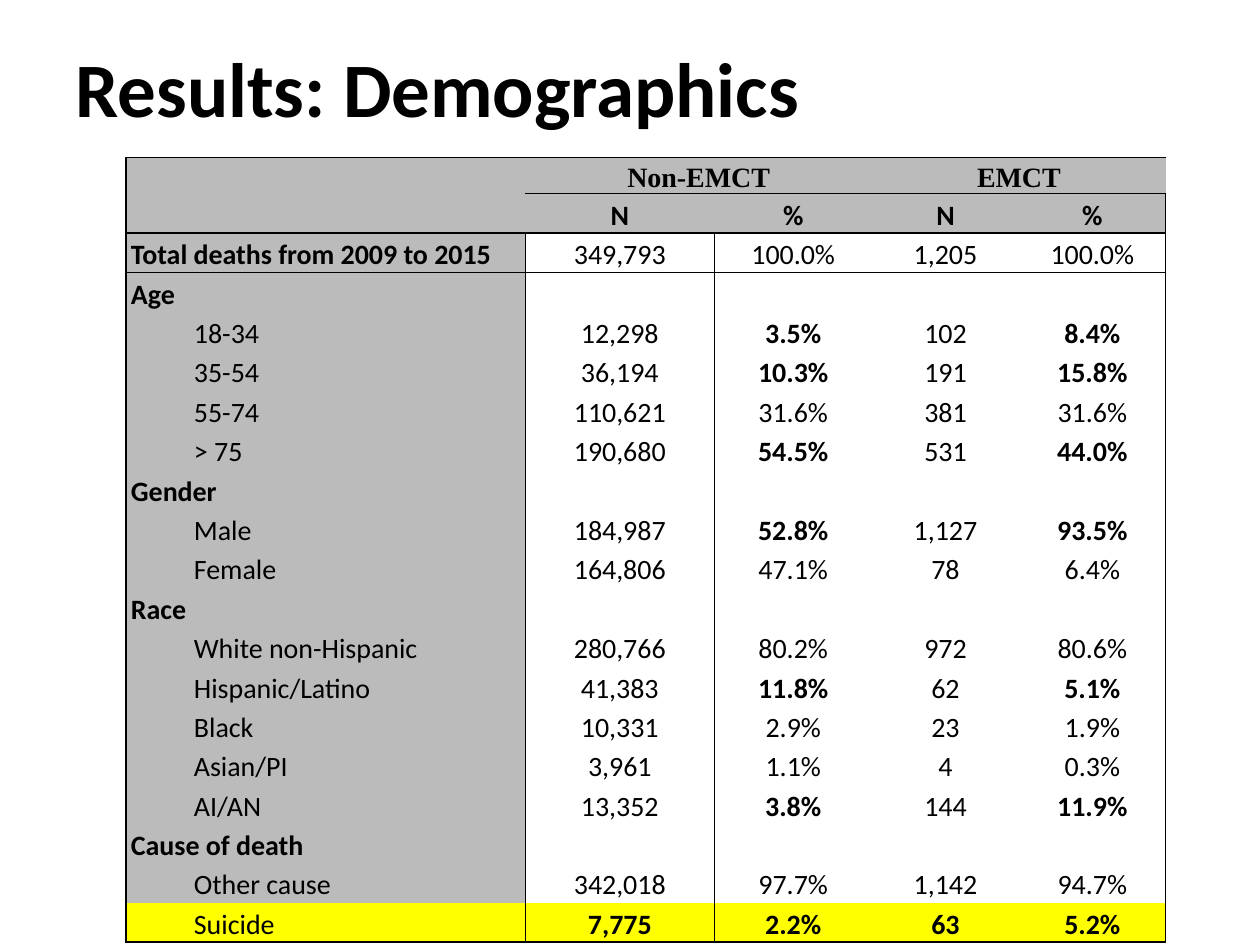
import pptx
import pptx.dml.color
import pptx.enum.text
import pptx.oxml
import pptx.oxml.ns
import pptx.util
from dataclasses import dataclass

Cm = pptx.util.Cm
Pt = pptx.util.Pt
ALIGN = pptx.enum.text.PP_ALIGN
ANCHOR = pptx.enum.text.MSO_ANCHOR


@dataclass(frozen=True)
class Theme:
    ink: str = "000000"
    paper: str = "FFFFFF"
    heading: str = "BBBBBB"
    highlight: str = "FFFF00"
    body_font: str = "Calibri"
    group_font: str = "Times New Roman"
    title_size: int = 44
    table_size: int = 16
    border: int = 1


theme = Theme()


def write(frame, text, font=theme.body_font, size=theme.table_size, bold=False,
          align=ALIGN.CENTER, line=1.15, gap=3, indent=0):
    para = frame.paragraphs[0]
    para.alignment = align
    para.line_spacing = line
    para.space_before = para.space_after = Pt(gap)
    if indent:
        para.level = 1
        properties = para._p.get_or_add_pPr()
        properties.set("marL", str(Cm(indent)))
        properties.set("indent", "0")
    span = para.add_run()
    span.text = text
    span.font.name = font
    span.font.size = Pt(size)
    span.font.bold = bold
    span.font.color.rgb = pptx.dml.color.RGBColor.from_string(theme.ink)


def style_cell(cell, fill, sides):
    properties = cell._tc.get_or_add_tcPr()
    for side in ("L", "R", "T", "B"):
        if side in sides:
            properties.append(pptx.oxml.parse_xml(
                f'<a:ln{side} {pptx.oxml.ns.nsdecls("a")} w="{Pt(theme.border)}">'
                f'<a:solidFill><a:srgbClr val="{theme.ink}"/></a:solidFill></a:ln{side}>'))
    cell.fill.solid()
    cell.fill.fore_color.rgb = pptx.dml.color.RGBColor.from_string(fill)
    cell.margin_left = cell.margin_right = Cm(0.1)
    cell.margin_top = cell.margin_bottom = 0


deck = pptx.Presentation()
deck.slide_width = Cm(25.4)
deck.slide_height = Cm(19.05)
page = deck.slides.add_slide(deck.slide_layouts[5])

title = page.shapes.title
title.left, title.top, title.width, title.height = Cm(1.27), Cm(0.76), Cm(22.86), Cm(2.21)
title.text_frame.auto_size = pptx.enum.text.MSO_AUTO_SIZE.NONE
title.text_frame.vertical_anchor = ANCHOR.MIDDLE
write(title.text_frame, "Results: Demographics", size=theme.title_size, bold=True,
      align=ALIGN.LEFT, line=0.9, gap=0)

sections = [
    ("Age", [
        ("18-34", "12,298", "3.5%*", "102", "8.4%*"),
        ("35-54", "36,194", "10.3%*", "191", "15.8%*"),
        ("55-74", "110,621", "31.6%", "381", "31.6%"),
        ("> 75", "190,680", "54.5%*", "531", "44.0%*"),
    ]),
    ("Gender", [
        ("Male", "184,987", "52.8%*", "1,127", "93.5%*"),
        ("Female", "164,806", "47.1%", "78", "6.4%"),
    ]),
    ("Race", [
        ("White non-Hispanic", "280,766", "80.2%", "972", "80.6%"),
        ("Hispanic/Latino", "41,383", "11.8%*", "62", "5.1%*"),
        ("Black", "10,331", "2.9%", "23", "1.9%"),
        ("Asian/PI", "3,961", "1.1%", "4", "0.3%"),
        ("AI/AN", "13,352", "3.8%*", "144", "11.9%*"),
    ]),
    ("Cause of death", [
        ("Other cause", "342,018", "97.7%", "1,142", "94.7%"),
        ("Suicide", "7,775*", "2.2%*", "63*", "5.2%*"),
    ]),
]
widths = [8.05, 3.81, 3.18, 2.96, 2.96]
row_height = 0.71
row_count = 3 + sum(1 + len(entries) for _, entries in sections)
last_row, last_column = row_count - 1, len(widths) - 1

table = page.shapes.add_table(row_count, len(widths), Cm(2.54), Cm(3.18),
                              Cm(sum(widths)), Cm(row_height * row_count)).table
table.first_row = table.horz_banding = False
style_id = table._tbl.tblPr.find(pptx.oxml.ns.qn("a:tableStyleId"))
style_id.text = "{2D5ABB26-0587-4C30-8999-92F81FD0307C}"
for column, width in zip(table.columns, widths):
    column.width = Cm(width)
for row in table.rows:
    row.height = Cm(row_height)

for r in range(row_count):
    for c in range(len(widths)):
        rules = {
            "L": c == 0 or (c == 1 and r >= 2),
            "R": c == last_column or (c == 0 and r >= 2),
            "T": r in (0, 2) or (r == 1 and c > 0),
            "B": r in (1, last_row) or (r == 0 and c > 0),
        }
        if r == last_row:
            fill = theme.highlight
        else:
            fill = theme.heading if r < 2 or c == 0 else theme.paper
        cell = table.cell(r, c)
        style_cell(cell, fill, [side for side, shown in rules.items() if shown])
        cell.vertical_anchor = ANCHOR.TOP if c == 0 else ANCHOR.BOTTOM

table.cell(0, 0).merge(table.cell(1, 0))
for c, group in ((1, "Non-EMCT"), (3, "EMCT")):
    table.cell(0, c).merge(table.cell(0, c + 1))
    write(table.cell(0, c).text_frame, group, font=theme.group_font, bold=True)
for c, heading in enumerate(("N", "%", "N", "%"), 1):
    write(table.cell(1, c).text_frame, heading, bold=True)

lines = [(2, 2, ("Total deaths from 2009 to 2015", "349,793", "100.0%", "1,205", "100.0%"))]
r = 3
for name, entries in sections:
    write(table.cell(r, 0).text_frame, name, bold=True, align=ALIGN.LEFT)
    for c in range(1, len(widths)):
        table.cell(r, c).merge(table.cell(r + 1, c))
    for i, entry in enumerate(entries):
        lines.append((r + 1 + i, r if i == 0 else r + 1 + i, entry))
    r += 1 + len(entries)

for label_row, value_row, (label, *values) in lines:
    is_total = label_row == 2
    write(table.cell(label_row, 0).text_frame, label, bold=is_total, align=ALIGN.LEFT,
          indent=0 if is_total else 1.27)
    for c, value in enumerate(values, 1):
        write(table.cell(value_row, c).text_frame, value.rstrip("*"), bold=value.endswith("*"))

deck.save("out.pptx")
